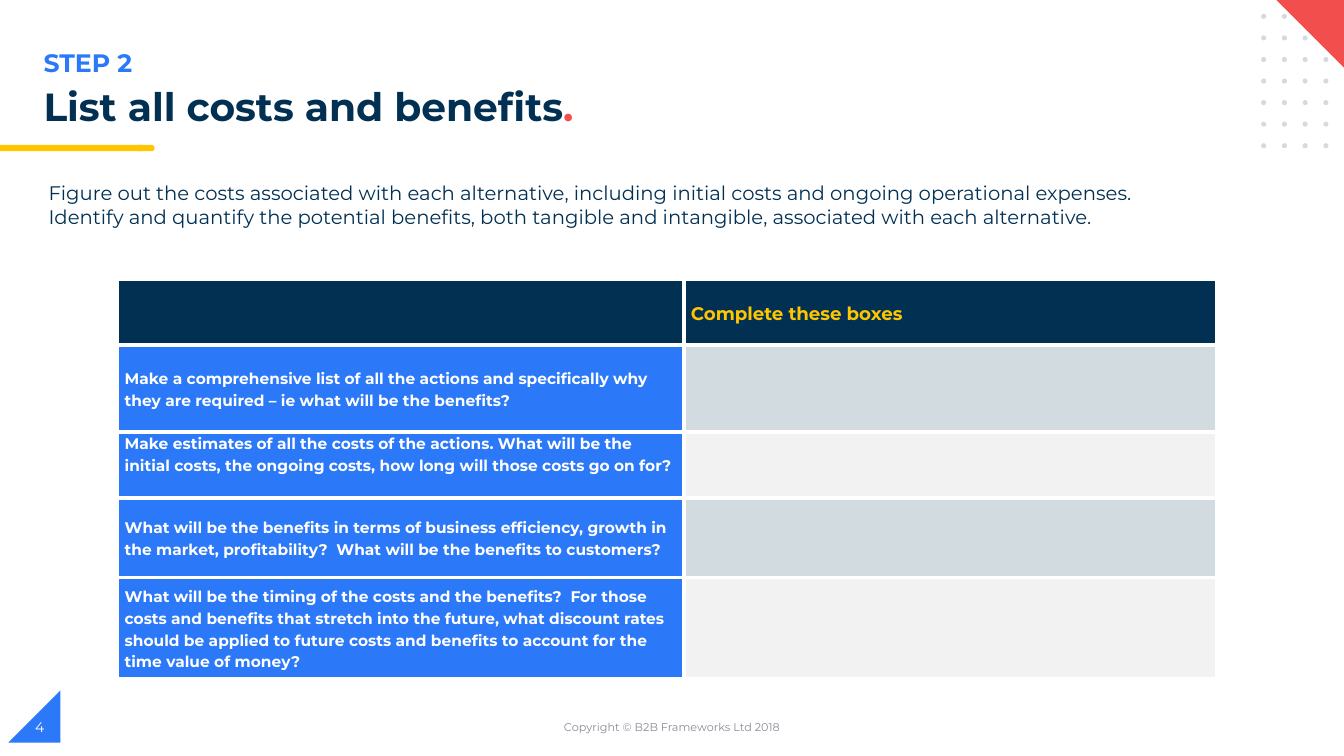
import pptx
import pptx.dml.color
import pptx.enum.shapes
import pptx.enum.text
import pptx.oxml.ns
import pptx.util
from collections import namedtuple
from lxml import etree

# The slide is a grid of 160 columns by 90 rows of square cells.
COLUMNS, ROWS = 160, 90
SLIDE_WIDTH, SLIDE_HEIGHT = pptx.util.Inches(13.33), pptx.util.Inches(7.5)
CELL = SLIDE_HEIGHT / ROWS
FONT = "Montserrat"
COLORS = {
    "navy": "023053", "blue": "2B79F8", "yellow": "FFC600", "red": "F24E4E",
    "mist": "D1DBE0", "pale": "F2F2F2", "grey": "888C97", "white": "FFFFFF",
}
SHAPES = pptx.enum.shapes.MSO_SHAPE
ANCHOR = pptx.enum.text.MSO_ANCHOR
ALIGN = pptx.enum.text.PP_ALIGN
Box = namedtuple("Box", "left top width height")

QUESTIONS = [
    "Make a comprehensive list of all the actions and specifically why they are required – ie what will be the benefits?",
    "Make estimates of all the costs of the actions. What will be the initial costs, the ongoing costs, how long will those costs go on for?",
    "What will be the benefits in terms of business efficiency, growth in the market, profitability?  What will be the benefits to customers?",
    "What will be the timing of the costs and the benefits?  For those costs and benefits that stretch into the future, what discount rates should be applied to future costs and benefits to account for the time value of money?",
]


def cells(count):
    return pptx.util.Emu(round(count * CELL))


def color(name):
    return pptx.dml.color.RGBColor.from_string(COLORS[name])


def add_run(paragraph, text, size, color_name, bold=False):
    run = paragraph.add_run()
    run.text = text
    run.font.name = FONT
    run.font.size = pptx.util.Pt(size)
    run.font.bold = bold
    run.font.color.rgb = color(color_name)


def add_text(slide, box, runs, anchor=ANCHOR.TOP, align=ALIGN.LEFT, line_spacing=1.0):
    """Add a text box of one paragraph; each run is (text, size, colour, bold)."""
    frame = slide.shapes.add_textbox(*map(cells, box)).text_frame
    frame.word_wrap = True
    frame.vertical_anchor = anchor
    paragraph = frame.paragraphs[0]
    paragraph.alignment = align
    paragraph.line_spacing = line_spacing
    for run in runs:
        add_run(paragraph, *run)


def add_solid(slide, kind, box, color_name, rotation=0):
    shape = slide.shapes.add_shape(kind, *map(cells, box))
    shape.shadow.inherit = False
    shape.fill.solid()
    shape.fill.fore_color.rgb = color(color_name)
    shape.line.fill.background()
    shape.rotation = rotation


def draw_heading(slide, box):
    add_text(slide, Box(box.left + 4, box.top, 80, 4.8), [("STEP 2", 18, "blue", True)])
    add_text(slide, Box(box.left + 4, box.top + 4.8, 134, 6.7),
             [("List all costs and benefits", 28, "navy", True), (".", 28, "red", True)],
             line_spacing=0.9)
    bar_top = box.top + box.height - 0.75
    add_solid(slide, SHAPES.FLOWCHART_TERMINATOR, Box(box.left + 16.1, bar_top, 2.3, 0.75), "yellow")
    add_solid(slide, SHAPES.RECTANGLE, Box(box.left, bar_top, 16.9, 0.75), "yellow")


def draw_corner(slide, box):
    """Draw the dot grid with the red triangle over its top right corner."""
    dot, columns, rows = 0.6, 4, 7
    column_step = (box.width - 1.9 - dot) / (columns - 1)
    row_step = (box.height - 1.65 - dot) / (rows - 1)
    for row in range(rows):
        for column in range(columns):
            add_solid(slide, SHAPES.OVAL,
                      Box(box.left + column * column_step,
                          box.top + 1.65 + row * row_step, dot, dot), "mist")
    side = 8.1
    add_solid(slide, SHAPES.RIGHT_TRIANGLE,
              Box(box.left + box.width - side, box.top, side, side), "red", rotation=180)


def draw_intro(slide, box):
    add_text(slide, box, [(
        "Figure out the costs associated with each alternative, including initial costs and "
        "ongoing operational expenses. Identify and quantify the potential benefits, both "
        "tangible and intangible, associated with each alternative.", 14, "navy")])


def set_borders(cell):
    properties = cell._tc.get_or_add_tcPr()
    for index, side in enumerate(("lnL", "lnR", "lnT", "lnB")):
        line = etree.Element(pptx.oxml.ns.qn("a:" + side), w=str(pptx.util.Pt(3)))
        fill = etree.SubElement(line, pptx.oxml.ns.qn("a:solidFill"))
        etree.SubElement(fill, pptx.oxml.ns.qn("a:srgbClr"), val=COLORS["white"])
        properties.insert(index, line)


def fill_cell(cell, fill_name, text="", size=11, color_name="white", anchor=ANCHOR.MIDDLE):
    cell.fill.solid()
    cell.fill.fore_color.rgb = color(fill_name)
    set_borders(cell)
    cell.margin_left = cell.margin_right = pptx.util.Inches(0.07)
    cell.margin_top = cell.margin_bottom = 0
    cell.vertical_anchor = anchor
    if text:
        paragraph = cell.text_frame.paragraphs[0]
        paragraph.line_spacing = 1.15
        add_run(paragraph, text, size, color_name, bold=True)


def draw_worksheet(slide, box):
    column_widths = (67.4, 63.4)
    row_heights = (7.8, 10.4, 7.8, 9.5, 12.1)
    table = slide.shapes.add_table(len(row_heights), len(column_widths), *map(cells, box)).table
    table.first_row = table.horz_banding = False
    for column, width in zip(table.columns, column_widths):
        column.width = cells(width * box.width / sum(column_widths))
    for row, height in zip(table.rows, row_heights):
        row.height = cells(height * box.height / sum(row_heights))
    fill_cell(table.cell(0, 0), "navy")
    fill_cell(table.cell(0, 1), "navy", "Complete these boxes", 13, "yellow")
    for row, question in enumerate(QUESTIONS, start=1):
        anchor = ANCHOR.TOP if row == 2 else ANCHOR.MIDDLE
        fill_cell(table.cell(row, 0), "blue", question, anchor=anchor)
        fill_cell(table.cell(row, 1), "mist" if row % 2 else "pale")


def draw_footer(slide, box):
    side = 6.2
    add_solid(slide, SHAPES.RIGHT_TRIANGLE, Box(box.left + 1, box.top, side, side), "blue", rotation=270)
    text_top, text_height, copyright_width = box.top + 2, 4.8, 54
    add_text(slide, Box(box.left + (box.width - copyright_width) / 2, text_top, copyright_width, text_height),
             [("Copyright © B2B Frameworks Ltd 2018", 8, "grey")], ANCHOR.MIDDLE, ALIGN.CENTER)
    add_text(slide, Box(box.left + 3, text_top, 36, text_height), [("4", 10, "white")], ANCHOR.MIDDLE)


def main():
    presentation = pptx.Presentation()
    presentation.slide_width, presentation.slide_height = SLIDE_WIDTH, SLIDE_HEIGHT
    slide = presentation.slides.add_slide(presentation.slide_layouts[6])
    draw_heading(slide, Box(0, 5, COLUMNS, 13))
    draw_corner(slide, Box(150.1, 0, COLUMNS - 150.1, 17.65))
    draw_intro(slide, Box(4.6, 21, 140.2, 6.8))
    draw_worksheet(slide, Box(14, 33.25, 130.8, 47.6))
    draw_footer(slide, Box(0, 82.2, COLUMNS, ROWS - 82.2))
    presentation.save("out.pptx")


if __name__ == "__main__":
    main()
